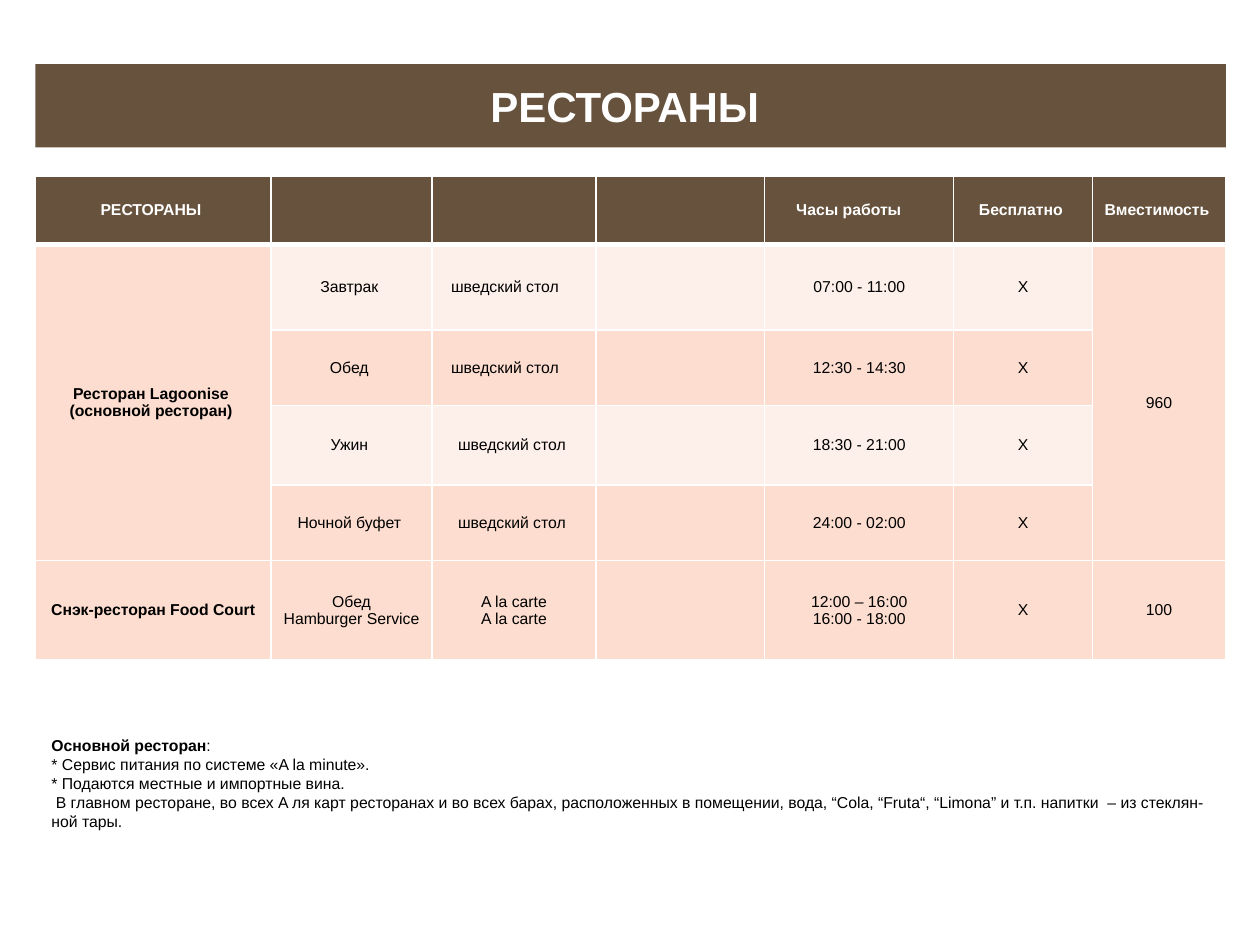
from lxml.etree import SubElement
from pptx import Presentation
from pptx.dml.color import RGBColor
from pptx.enum.text import MSO_ANCHOR as Anchor, PP_ALIGN as Align
from pptx.oxml.ns import qn
from pptx.util import Inches, Pt

COLORS = {"brown": "66523D", "peach": "FCDDCF", "pale": "FDEFE9",
          "white": "FFFFFF", "black": "000000"}

TITLE = "РЕСТОРАНЫ "
HEADER = ["РЕСТОРАНЫ ", "", "", "", "Часы работы \t", "Бесплатно ", "Вместимость "]
MEALS = [
    ["Ресторан Lagoonise \n(основной ресторан) ", "Завтрак ", "шведский стол \t", "",
     "07:00 - 11:00", "X", "960"],
    ["", "Обед ", "шведский стол \t", "", "12:30 - 14:30", "X", ""],
    ["", "Ужин ", "шведский стол ", "", "18:30 - 21:00", "X", ""],
    ["", "Ночной буфет ", "шведский стол ", "", "24:00 - 02:00", "X", ""],
    ["Cнэк-ресторан Food Court", "Обед\nHamburger Service", "A la carte\nA la carte", "",
     "12:00 – 16:00\n16:00 - 18:00", "X", "100"],
]
NOTES_LEAD = "Oсновной ресторан"
NOTES = """:
* Сервис питания по системе «A la minute».
* Подаются местные и импортные вина.
 В главном ресторане, во всех A ля карт ресторанах и во всех барах, расположенных в помещении, вода, “Cola, “Fruta“, “Limona” и т.п. напитки  – из стеклян-ной тары."""

COLUMNS = [1.87, 1.28, 1.3, 1.34, 1.5, 1.1, 1.06]
ROWS = [0.54, 0.68, 0.6, 0.63, 0.6, 0.79]
LEFT, WIDTH = 0.28, 9.45
MAIN_ROWS = (1, 4)
EDGE_COLUMNS = (0, len(COLUMNS) - 1)


def rgb(color):
    return RGBColor.from_string(COLORS[color])


def write(frame, text, size=9, color="black", bold=False, align=Align.CENTER, lead=""):
    for index, line in enumerate(text.split("\n")):
        paragraph = frame.add_paragraph() if index else frame.paragraphs[0]
        paragraph.alignment = align
        pieces = [(line, bold)]
        if lead and index == 0:
            pieces.insert(0, (lead, True))
        for piece, weight in pieces:
            run = paragraph.add_run()
            run.text = piece
            run.font.name = "Arial"
            run.font.size = Pt(size)
            run.font.bold = weight
            run.font.color.rgb = rgb(color)


def set_borders(cell, **widths):
    properties = cell._tc.get_or_add_tcPr()
    for side in "LRTB":
        line = SubElement(properties, qn(f"a:ln{side}"), w=str(Pt(widths.get(side, 1))))
        fill = SubElement(line, qn("a:solidFill"))
        SubElement(fill, qn("a:srgbClr"), val=COLORS["white"])


def add_title(slide):
    title = slide.shapes.title
    title.left, title.top = Inches(LEFT), Inches(0.51)
    title.width, title.height = Inches(WIDTH), Inches(0.66)
    title.fill.solid()
    title.fill.fore_color.rgb = rgb("brown")
    title.text_frame.vertical_anchor = Anchor.MIDDLE
    write(title.text_frame, TITLE, size=24, color="white", bold=True)


def format_cell(cell, text, row, column):
    header, edge = row == 0, column in EDGE_COLUMNS
    set_borders(cell, T=3 if row == 1 else 1, B=3 if header else 1)
    striped = row in (1, 3) and not edge
    cell.fill.solid()
    cell.fill.fore_color.rgb = rgb("brown" if header else "pale" if striped else "peach")
    cell.vertical_anchor = Anchor.MIDDLE
    if header or edge:
        cell.margin_left = cell.margin_right = cell.margin_top = cell.margin_bottom = 0
    if text:
        write(cell.text_frame, text, color="white" if header else "black",
              bold=header or column == 0)


def add_schedule(slide):
    schedule = slide.shapes.add_table(
        len(ROWS), len(COLUMNS), Inches(LEFT), Inches(1.4),
        Inches(WIDTH), Inches(sum(ROWS))).table
    for column, width in zip(schedule.columns, COLUMNS):
        column.width = Inches(width)
    for row, height in zip(schedule.rows, ROWS):
        row.height = Inches(height)
    for row, texts in enumerate([HEADER, *MEALS]):
        for column, text in enumerate(texts):
            format_cell(schedule.cell(row, column), text, row, column)
    first, last = MAIN_ROWS
    for column in EDGE_COLUMNS:
        schedule.cell(first, column).merge(schedule.cell(last, column))


def add_notes_text(slide):
    notes = slide.shapes.add_textbox(Inches(0.31), Inches(5.79), Inches(9.37), Inches(0.86))
    notes.text_frame.word_wrap = True
    write(notes.text_frame, NOTES, align=Align.LEFT, lead=NOTES_LEAD)


def main():
    deck = Presentation()
    deck.slide_width, deck.slide_height = Inches(10), Inches(7.5)
    slide = deck.slides.add_slide(deck.slide_layouts[5])
    add_title(slide)
    add_schedule(slide)
    add_notes_text(slide)
    deck.save("out.pptx")


if __name__ == "__main__":
    main()
